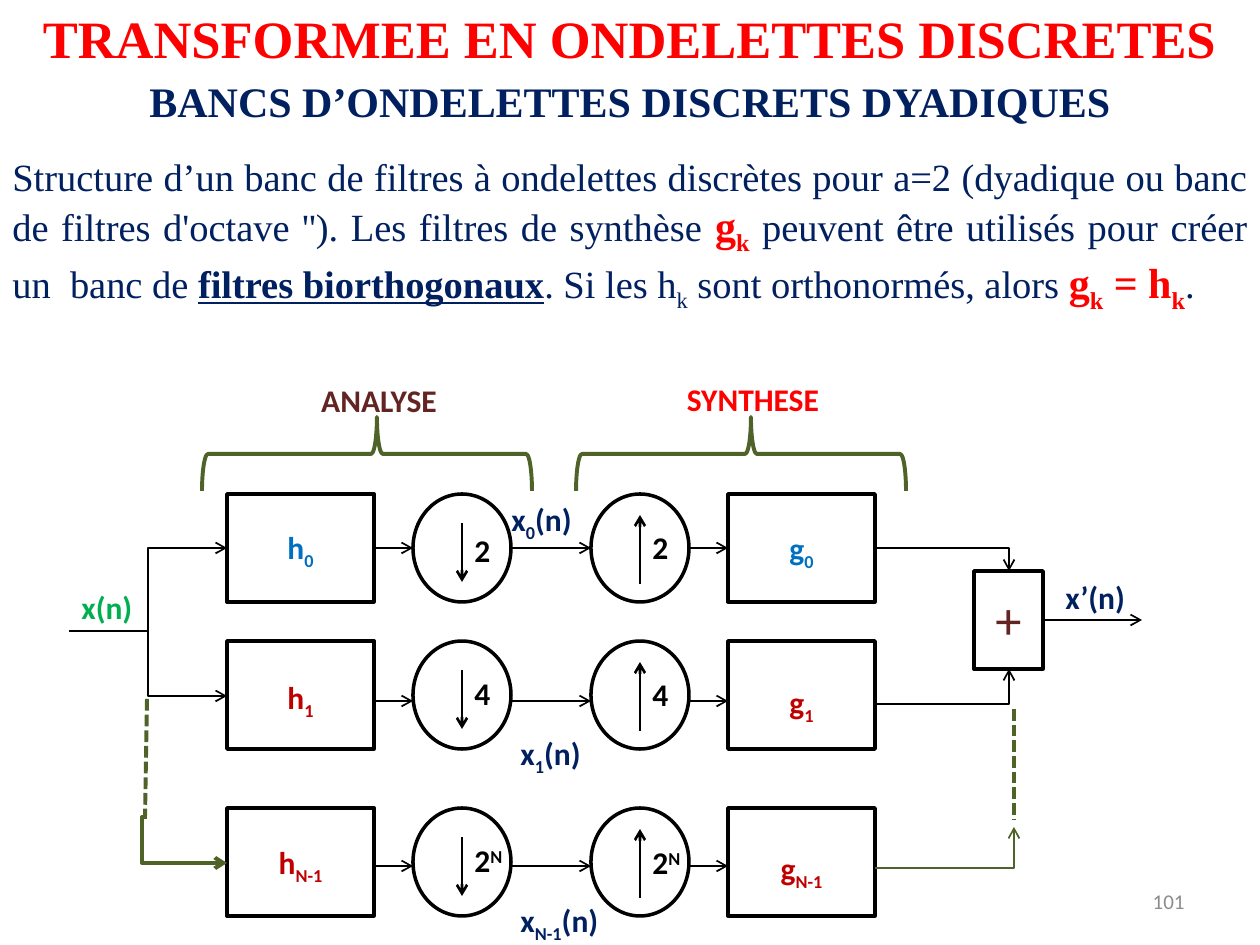
from collections import namedtuple

from pptx import Presentation
from pptx.dml.color import RGBColor
from pptx.enum.dml import MSO_LINE
from pptx.enum.shapes import MSO_CONNECTOR, MSO_SHAPE
from pptx.enum.text import MSO_ANCHOR, MSO_AUTO_SIZE, PP_ALIGN
from pptx.oxml.ns import qn
from pptx.oxml.xmlchemy import OxmlElement
from pptx.util import Pt

EMU_PER_PX = 914400 / 126
BLACK, NAVY, RED, BRICK = "000000", "002060", "FF0000", "C00000"
BLUE, GREEN, OLIVE, MAROON, GREY = "0070C0", "00B050", "4F6228", "632523", "8C8C8C"
SERIF = "Times New Roman"
SUB, SUPER = -25, 30

# Offsets ending in _dy are measured from the top of the band
Band = namedtuple("Band", "top index rate power color wire_dy h_dy g_dy down_dy up_dy")
BANDS = [
    Band(494, "0", "2", "", BLUE, 54, 28, 29, 31, 28),
    Band(641, "1", "4", "", BRICK, 60, 31, 36, 27, 28),
    Band(808, "N-1", "2", "N", BRICK, 58, 29, 35, 27, 29),
]
BAND_HEIGHT, FILTER_WIDTH, SAMPLER_WIDTH = 108, 147, 98
H_LEFT, DOWN_LEFT, UP_LEFT, G_LEFT = 227, 413, 591, 728


def px(length):
    return round(length * EMU_PER_PX)


def rgb(color):
    return RGBColor.from_string(color)


def add_child(parent, tag, **attributes):
    child = OxmlElement(tag)
    for key, value in attributes.items():
        child.set(key, value)
    parent.append(child)


class Diagram:
    """Draws on one slide in a single style, with lengths in px."""

    label_format = {"name": "Calibri", "size": 18, "bold": True}

    def __init__(self, slide):
        self.shapes = slide.shapes

    def outline(self, kind, left, top, width, height, color=BLACK, weight=2,
                rotation=0, adjustments=()):
        shape = self.shapes.add_shape(kind, px(left), px(top), px(width), px(height))
        shape.rotation = rotation
        for position, value in enumerate(adjustments):
            shape.adjustments[position] = value
        shape.shadow.inherit = False
        shape.fill.background()
        shape.line.color.rgb = rgb(color)
        shape.line.width = Pt(weight)

    def wire(self, start, end, color=BLACK, weight=1, arrow=True, dash=None,
             preset=None, bend=None):
        """Straight by default; preset names an elbow and bend is its adjustment."""
        kind = MSO_CONNECTOR.ELBOW if preset else MSO_CONNECTOR.STRAIGHT
        wire = self.shapes.add_connector(kind, *map(px, start + end))
        wire.line.color.rgb = rgb(color)
        wire.line.width = Pt(weight)
        if dash:
            wire.line.dash_style = dash
        properties = wire._element.spPr
        if preset:
            geometry = properties.find(qn("a:prstGeom"))
            geometry.set("prst", preset)
            if bend is not None:
                add_child(geometry.find(qn("a:avLst")), "a:gd",
                          name="adj1", fmla=f"val {round(bend * 100000)}")
        if arrow:
            add_child(properties.find(qn("a:ln")), "a:tailEnd", type="arrow")
        add_child(properties, "a:effectLst")

    def text(self, left, top, width, height, runs, align=PP_ALIGN.LEFT,
             anchor=MSO_ANCHOR.TOP, fit=True, **base_format):
        """Each run is (text, changes to the base format)."""
        box = self.shapes.add_textbox(px(left), px(top), px(width), px(height))
        frame = box.text_frame
        frame.word_wrap = True
        frame.vertical_anchor = anchor
        if fit:
            frame.auto_size = MSO_AUTO_SIZE.SHAPE_TO_FIT_TEXT
        paragraph = frame.paragraphs[0]
        paragraph.alignment = align
        for content, changes in runs:
            run = paragraph.add_run()
            run.text = content
            style = {**self.label_format, **base_format, **changes}
            run.font.color.rgb = rgb(style.pop("color"))
            baseline = style.pop("baseline", 0)
            if baseline:
                run._r.get_or_add_rPr().set("baseline", str(baseline * 1000))
            style["size"] = Pt(style["size"])
            for key, value in style.items():
                setattr(run.font, key, value)

    def label(self, left, top, width, content, color, align=PP_ALIGN.LEFT,
              index="", tail="", baseline=SUB):
        runs = [(content, {}), (index, {"baseline": baseline}), (tail, {})]
        self.text(left, top, width, 50, [run for run in runs if run[0]],
                  align, color=color)


def draw_headings(diagram):
    for top, height, size, color, heading in [
        (0, 77, 30, RED, "TRANSFORMEE EN ONDELETTES DISCRETES"),
        (69, 63, 24, NAVY, "BANCS D’ONDELETTES DISCRETS DYADIQUES"),
    ]:
        diagram.text(0, top, 1260, height, [(heading, {})], PP_ALIGN.CENTER,
                     name=SERIF, size=size, color=color)

    key = {"size": 24, "color": RED, "bold": True}
    key_sub = {**key, "baseline": SUB}
    diagram.text(0, 147, 1260, 161, [
        ("Structure d’un banc de filtres à ondelettes discrètes pour a=2 (dyadique "
         "ou banc de filtres d'octave ''). Les filtres de synthèse ", {}),
        ("g", key), ("k", key_sub),
        (" peuvent être utilisés pour créer un  banc de ", {}),
        ("filtres biorthogonaux", {"bold": True, "underline": True}),
        (". Si les h", {}), ("k", {"baseline": SUB}),
        (" sont orthonormés, alors ", {}),
        ("g", key), ("k", key_sub), (" = h", key), ("k", key_sub), (".", {}),
    ], PP_ALIGN.JUSTIFY, name=SERIF, size=22, color=NAVY, bold=False)


def draw_band(diagram, band):
    top, wire_y = band.top, band.top + band.wire_dy
    for left, letter, label_dy in [(H_LEFT, "h", band.h_dy), (G_LEFT, "g", band.g_dy)]:
        diagram.outline(MSO_SHAPE.RECTANGLE, left, top, FILTER_WIDTH, BAND_HEIGHT)
        diagram.label(left, top + label_dy, FILTER_WIDTH, letter, band.color,
                      PP_ALIGN.CENTER, index=band.index)

    for left, tail_dy, head_dy, label_dy in [
        (DOWN_LEFT, 29, 88, band.down_dy), (UP_LEFT, 90, 21, band.up_dy),
    ]:
        center = left + SAMPLER_WIDTH // 2
        diagram.outline(MSO_SHAPE.OVAL, left, top, SAMPLER_WIDTH, BAND_HEIGHT)
        diagram.wire((center, top + tail_dy), (center, top + head_dy), weight=1.5)
        diagram.label(center, top + label_dy, 59, band.rate, BLACK,
                      index=band.power, baseline=SUPER)

    for start, end in [(H_LEFT + FILTER_WIDTH, DOWN_LEFT),
                       (DOWN_LEFT + SAMPLER_WIDTH, UP_LEFT),
                       (UP_LEFT + SAMPLER_WIDTH, G_LEFT)]:
        diagram.wire((start, wire_y), (end, wire_y))


def draw_input_and_output(diagram):
    for end_y in (548, 696):
        diagram.wire((69, 631), (H_LEFT, end_y), preset="bentConnector3")
    diagram.label(69, 582, 88, "x(n)", GREEN)

    diagram.outline(MSO_SHAPE.RECTANGLE, 974, 571, 69, 98)
    diagram.text(974, 581, 69, 77, [("+", {})], PP_ALIGN.CENTER,
                 size=30, bold=False, color=MAROON)
    g_right = G_LEFT + FILTER_WIDTH
    for start_y, end_y in [(548, 571), (704, 669)]:
        diagram.wire((g_right, start_y), (1009, end_y), preset="bentConnector2")
    diagram.wire((1043, 620), (1142, 620))
    diagram.label(1053, 572, 88, "x’(n)", NAVY)

    for start, end in [((147, 699), (145, 818)), ((1014, 709), (1014, 819))]:
        diagram.wire(start, end, OLIVE, 2.25, arrow=False, dash=MSO_LINE.SQUARE_DOT)
    diagram.wire((147, 817), (H_LEFT, 863), OLIVE, 2.25,
                 preset="bentConnector3", bend=-0.06)
    diagram.wire((g_right, 868), (1014, 827), OLIVE,
                 preset="bentConnector3", bend=1)


def main():
    deck = Presentation()
    deck.slide_width, deck.slide_height = px(1260), px(945)
    diagram = Diagram(deck.slides.add_slide(deck.slide_layouts[6]))

    draw_headings(diagram)
    for band in BANDS:
        draw_band(diagram, band)
    for band, left, top, width in zip(BANDS, (499, 508, 508), (494, 728, 895),
                                      (88, 88, 112)):
        diagram.label(left, top, width, "x", NAVY, index=band.index, tail="(n)")
    draw_input_and_output(diagram)

    for brace_left, left, top, stage, color in [
        (330, 207, 375, "ANALYSE", MAROON), (704, 581, 374, "SYNTHESE", RED),
    ]:
        diagram.outline(MSO_SHAPE.LEFT_BRACE, brace_left, 289, 74, 330, OLIVE, 2.25,
                        rotation=90, adjustments=(0.08, 0.47))
        diagram.label(left, top, 344, stage, color, PP_ALIGN.CENTER)

    diagram.text(903, 876, 294, 50, [("101", {})], PP_ALIGN.RIGHT, MSO_ANCHOR.MIDDLE,
                 fit=False, size=12, bold=False, color=GREY)
    deck.save("out.pptx")


if __name__ == "__main__":
    main()
